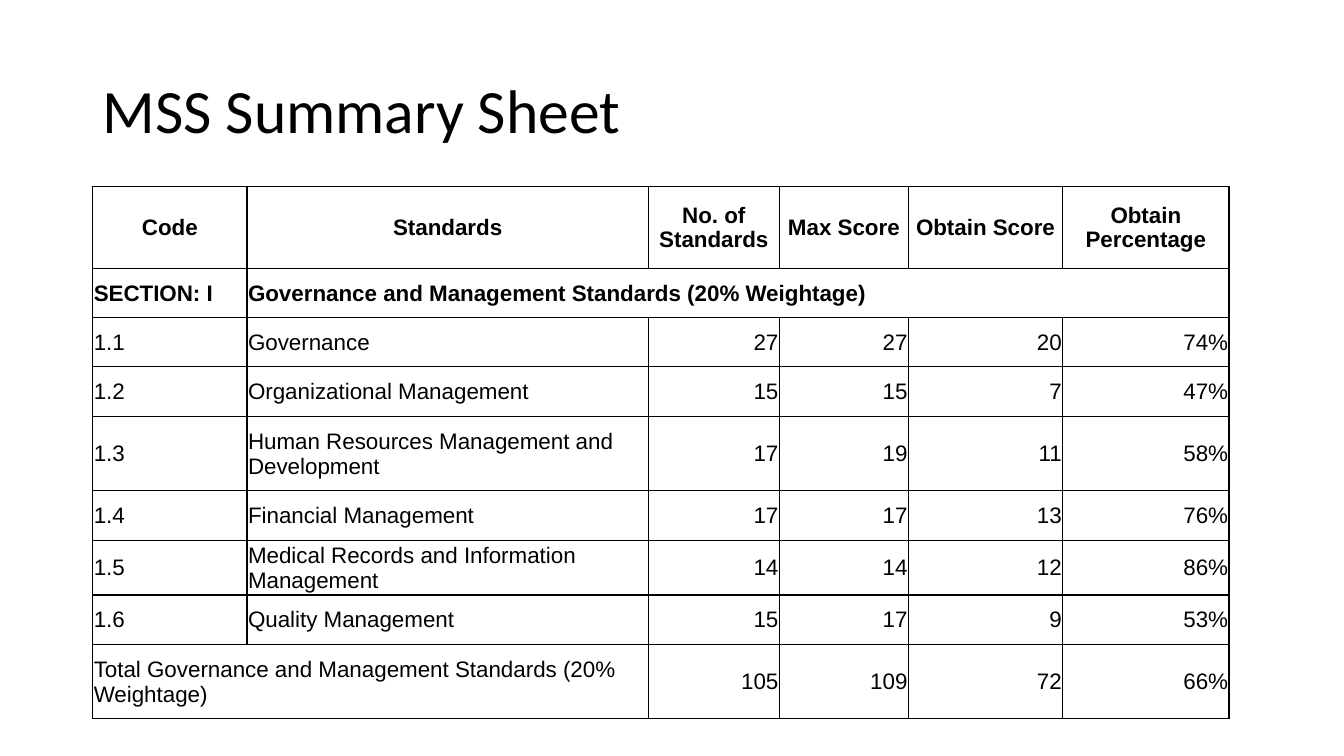
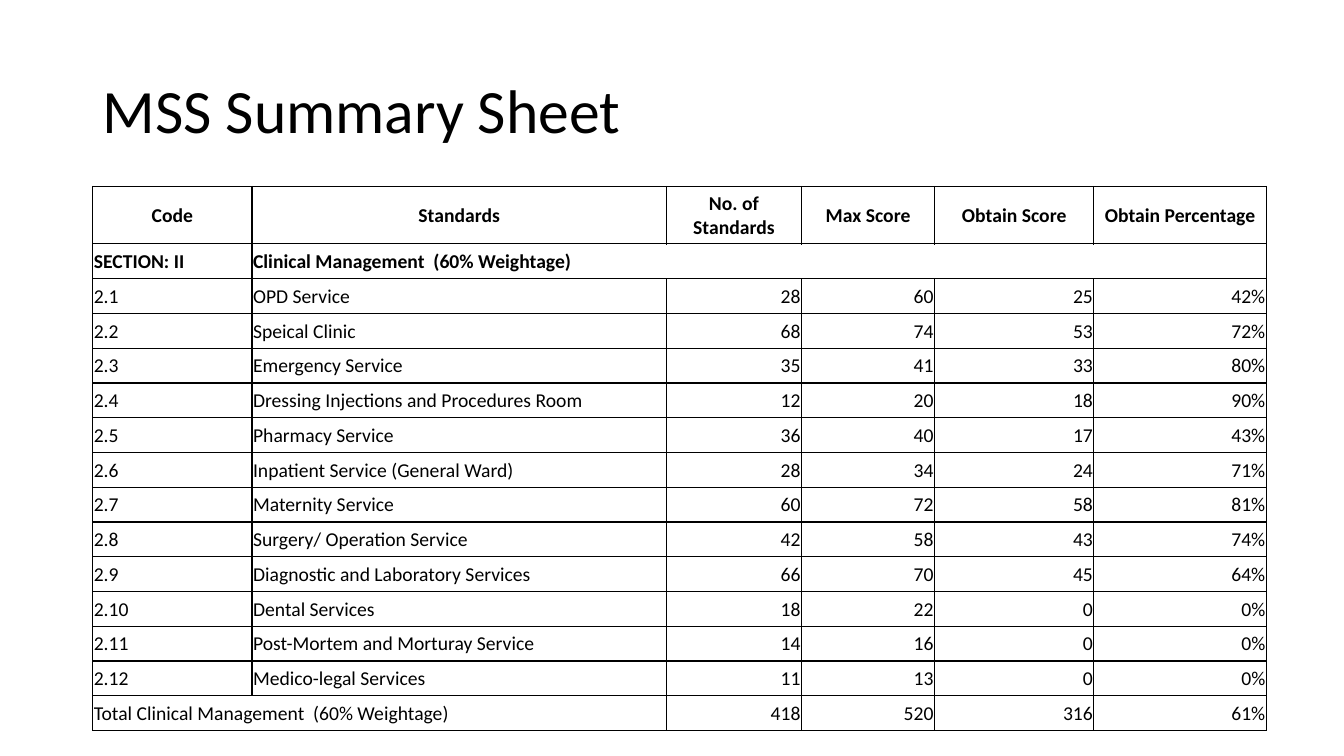
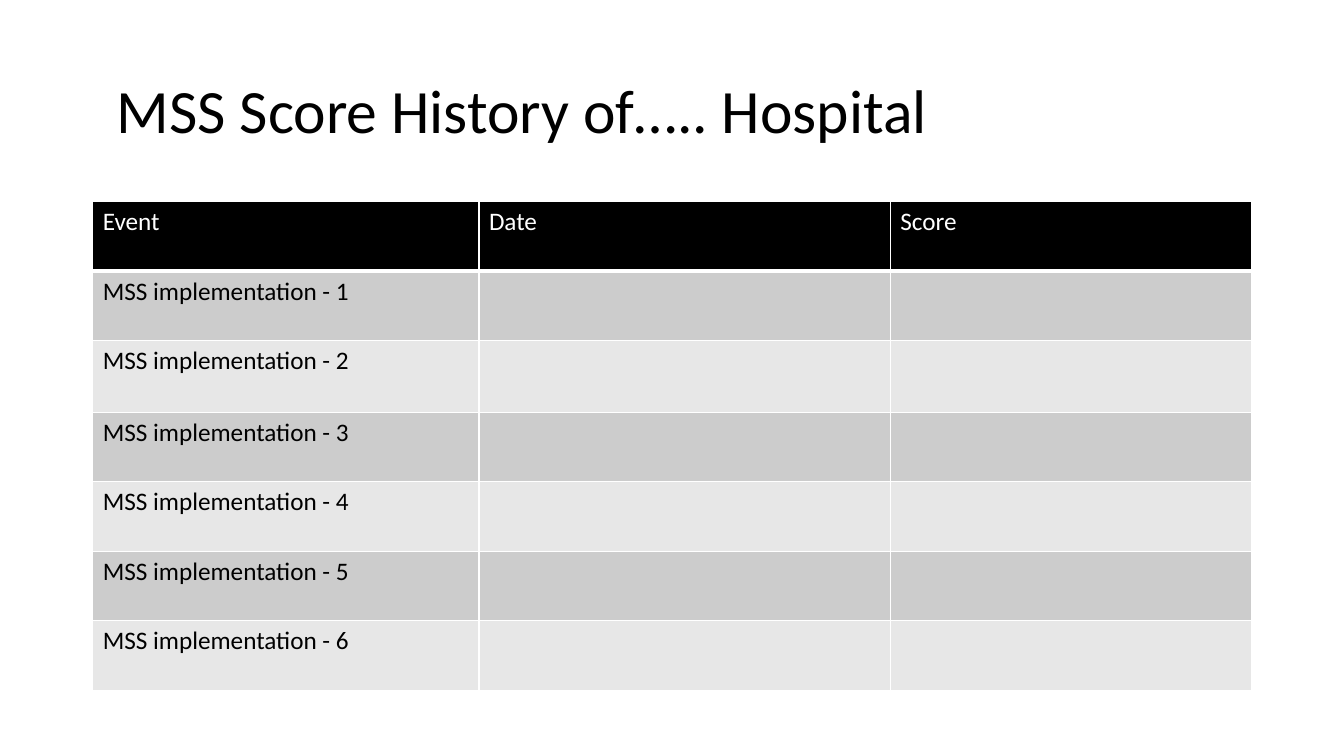
from lxml import etree
from pptx import Presentation
from pptx.dml.color import RGBColor
from pptx.enum.text import MSO_ANCHOR, PP_ALIGN
from pptx.oxml.ns import qn
from pptx.util import Inches, Pt

LEFT, CENTER, RIGHT = PP_ALIGN.LEFT, PP_ALIGN.CENTER, PP_ALIGN.RIGHT
MIDDLE = MSO_ANCHOR.MIDDLE
COLORS = {"black": "000000", "white": "FFFFFF", "dark band": "CCCCCC", "light band": "E7E7E7"}
MARGIN = 0.92
HEADINGS = ["Code", "Standards", "No. of Standards", "Max Score", "Obtain Score", "Obtain Percentage"]


def write(tf, text, size=18, font="Calibri", color="black", bold=False, align=LEFT, spacing=None):
    p = tf.paragraphs[0]
    p.alignment = align
    p.line_spacing = spacing
    r = p.add_run()
    r.text = text
    r.font.size = Pt(size)
    r.font.name = font
    r.font.bold = bold
    r.font.color.rgb = RGBColor.from_string(COLORS[color])


def style_cell(cell, line, fill=None, bottom=1):
    """Draw the four borders, then the fill, which must follow them in the XML."""
    tc_pr = cell._tc.get_or_add_tcPr()
    for side, width in (("L", 1), ("R", 1), ("T", 1), ("B", bottom)):
        ln = etree.SubElement(tc_pr, qn(f"a:ln{side}"), w=str(Pt(width)))
        solid = etree.SubElement(ln, qn("a:solidFill"))
        etree.SubElement(solid, qn("a:srgbClr"), val=COLORS[line])
    if fill:
        cell.fill.solid()
        cell.fill.fore_color.rgb = RGBColor.from_string(COLORS[fill])
    else:
        cell.fill.background()


summaries = [
    {
        "font": "Arial", "size": 16,
        "widths": [1.53, 3.98, 1.3, 1.28, 1.53, 1.65],
        "heights": [0.81, 0.49, 0.49, 0.49, 0.74, 0.49, 0.49, 0.49, 0.74],
        "rows": [
            ["SECTION: I", "Governance and Management Standards (20% Weightage)"],
            ["1.1", "Governance", 27, 27, 20, "74%"],
            ["1.2", "Organizational Management", 15, 15, 7, "47%"],
            ["1.3", "Human Resources Management and Development", 17, 19, 11, "58%"],
            ["1.4", "Financial Management", 17, 17, 13, "76%"],
            ["1.5", "Medical Records and Information Management", 14, 14, 12, "86%"],
            ["1.6", "Quality Management", 15, 17, 9, "53%"],
            ["Total Governance and Management Standards (20% Weightage)", "", 105, 109, 72, "66%"],
        ],
    },
    {
        "font": "Calibri", "size": 14,
        "widths": [1.58, 4.11, 1.34, 1.32, 1.58, 1.71],
        "heights": [0.57] + [0.345] * 14,
        "rows": [
            ["SECTION: II", "Clinical Management  (60% Weightage)"],
            ["2.1", "OPD Service", 28, 60, 25, "42%"],
            ["2.2", "Speical Clinic", 68, 74, 53, "72%"],
            ["2.3", "Emergency Service", 35, 41, 33, "80%"],
            ["2.4", "Dressing Injections and Procedures Room", 12, 20, 18, "90%"],
            ["2.5", "Pharmacy Service", 36, 40, 17, "43%"],
            ["2.6", "Inpatient Service (General Ward)", 28, 34, 24, "71%"],
            ["2.7", "Maternity Service", 60, 72, 58, "81%"],
            ["2.8", "Surgery/ Operation Service", 42, 58, 43, "74%"],
            ["2.9", "Diagnostic and Laboratory Services", 66, 70, 45, "64%"],
            ["2.10", "Dental Services", 18, 22, 0, "0%"],
            ["2.11", "Post-Mortem and Morturay Service", 14, 16, 0, "0%"],
            ["2.12", "Medico-legal Services", 11, 13, 0, "0%"],
            ["Total Clinical Management  (60% Weightage)", "", 418, 520, 316, "61%"],
        ],
    },
]
history = {
    "widths": [3.83, 4.08, 3.58],
    "heights": [0.69, 0.69, 0.71, 0.69, 0.69, 0.69, 0.69],
}

prs = Presentation()
prs.slide_width, prs.slide_height = Inches(13.33), Inches(7.5)

# Titles and empty table grids
tables = []
for title, top, grid in (
    ("MSS Summary Sheet", 1.85, summaries[0]),
    ("MSS Summary Sheet", 1.85, summaries[1]),
    (" MSS Score History of….. Hospital", 2, history),
):
    s = prs.slides.add_slide(prs.slide_layouts[6])
    tf = s.shapes.add_textbox(Inches(MARGIN), Inches(0.4), Inches(11.5), Inches(1.45)).text_frame
    tf.word_wrap = True
    tf.vertical_anchor = MIDDLE
    write(tf, title, size=44, spacing=0.9)

    widths, heights = grid["widths"], grid["heights"]
    table = s.shapes.add_table(len(heights), len(widths), Inches(MARGIN), Inches(top),
                               Inches(sum(widths)), Inches(sum(heights))).table
    table.first_row = table.horz_banding = False
    for column, width in zip(table.columns, widths):
        column.width = Inches(width)
    for row, height in zip(table.rows, heights):
        row.height = Inches(height)
    tables.append(table)

# Summary sheets
for table, summary in zip(tables, summaries):
    for cell in table.iter_cells():
        cell.margin_left = cell.margin_right = cell.margin_top = Inches(0.01)
        cell.margin_bottom = 0
        cell.vertical_anchor = MIDDLE
        style_cell(cell, "black")
    last = len(summary["rows"])
    table.cell(1, 1).merge(table.cell(1, 5))
    table.cell(last, 0).merge(table.cell(last, 1))
    for i, values in enumerate([HEADINGS] + summary["rows"]):
        for j, value in enumerate(values):
            if value == "":
                continue
            align = CENTER if i == 0 else RIGHT if j > 1 else LEFT
            write(table.cell(i, j).text_frame, str(value), size=summary["size"],
                  font=summary["font"], bold=i < 2, align=align)

# Score history
table = tables[2]
for j, heading in enumerate(["Event", "Date", "Score"]):
    write(table.cell(0, j).text_frame, heading, color="white")
    style_cell(table.cell(0, j), "white", "black", bottom=3)
for i in range(1, len(history["heights"])):
    write(table.cell(i, 0).text_frame, f"MSS implementation - {i}")
    for j in range(len(history["widths"])):
        style_cell(table.cell(i, j), "white", "dark band" if i % 2 else "light band")

prs.save("out.pptx")
